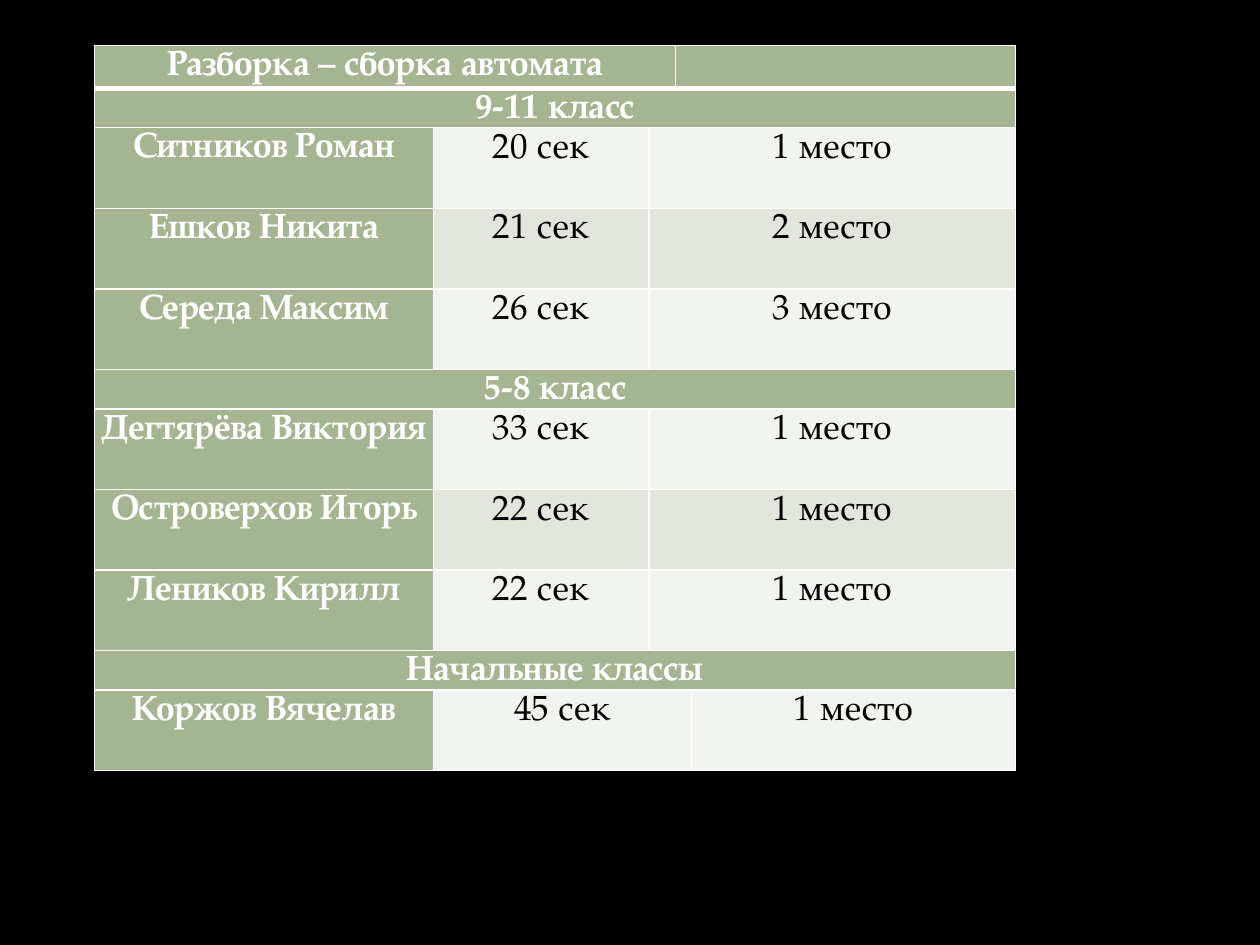
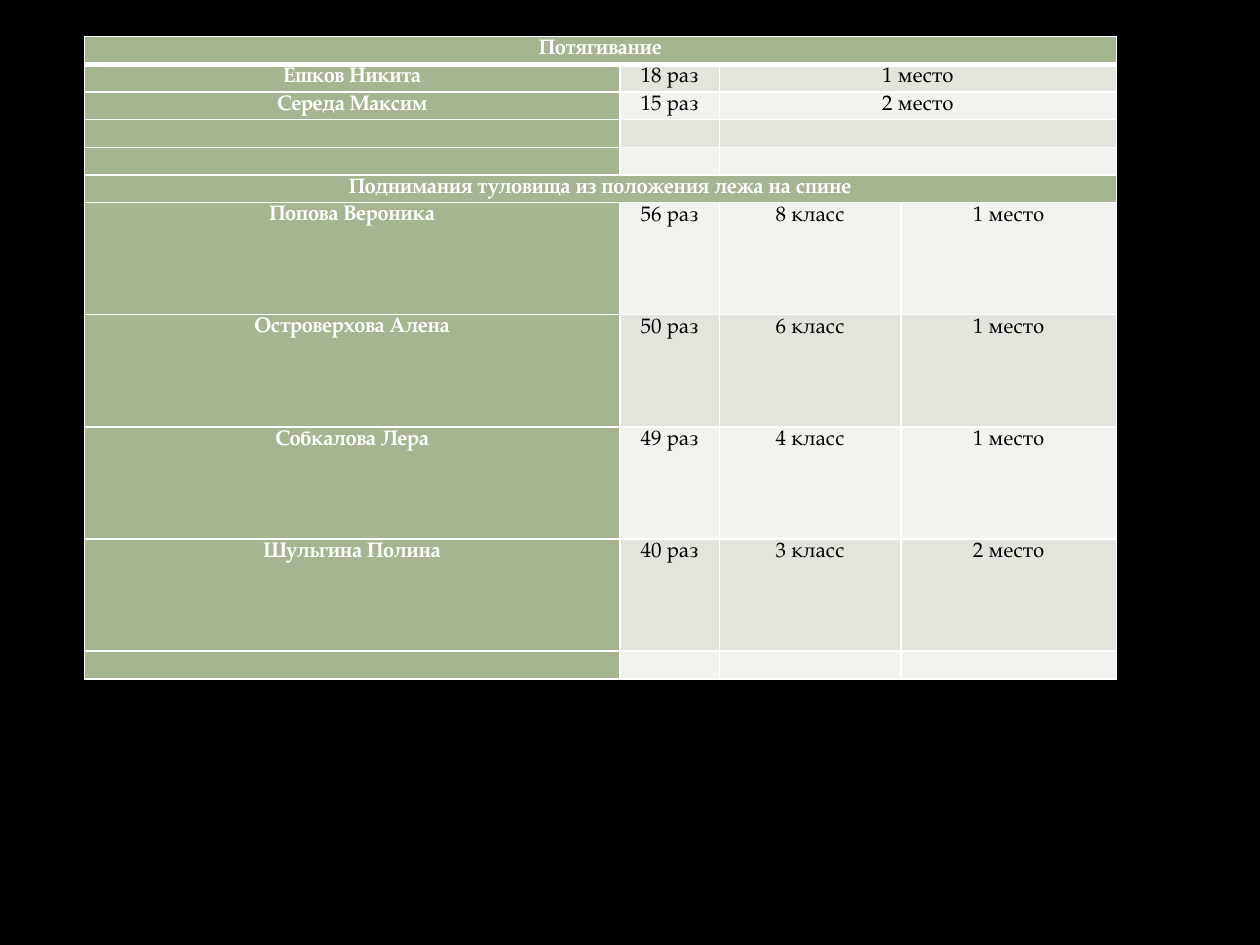
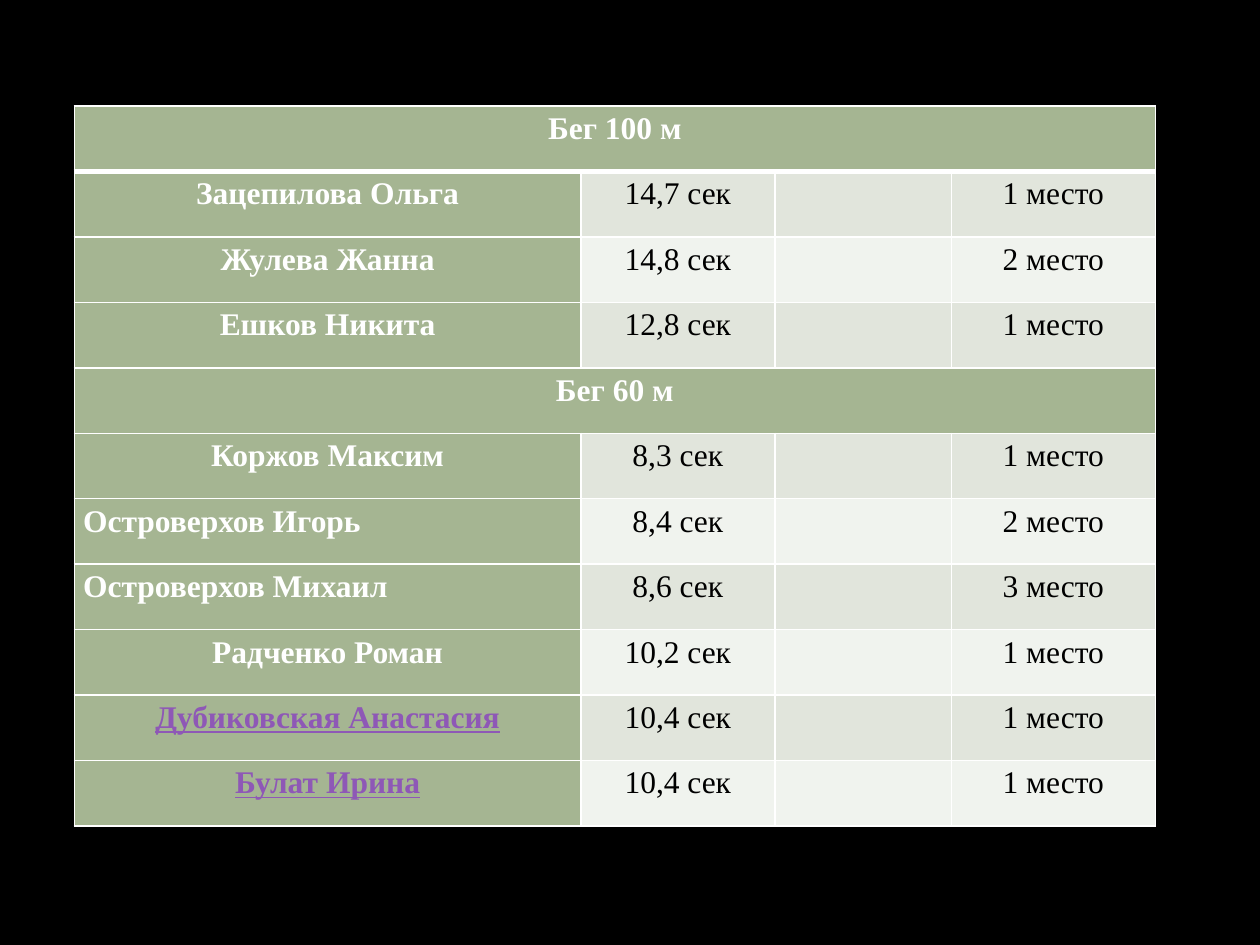
import dataclasses

import lxml.etree
import pptx
import pptx.dml.color
import pptx.enum.text
import pptx.oxml.ns
import pptx.util

Inches = pptx.util.Inches
Align = pptx.enum.text.PP_ALIGN


@dataclasses.dataclass(frozen=True)
class Theme:
    back: str = "000000"
    head: str = "A5B592"
    bands: tuple = ("F0F3EE", "E1E5DC")  # even rows, odd rows
    light: str = "FFFFFF"
    dark: str = "000000"
    mark: str = "8E58B6"
    serif: str = "TeX Gyre Pagella"
    roman: str = "Times New Roman"
    big: int = 20
    mid: int = 18
    small: int = 12
    thin: int = 1
    thick: int = 3
    space: float = 1.15


THEME = Theme()


def color(code):
    return pptx.dml.color.RGBColor.from_string(code)


def qname(tag):
    return pptx.oxml.ns.qn(tag)


def put_text(cell, text, size, font, tint=THEME.dark, bold=False,
             line=False, align=Align.CENTER, hang=0):
    """Write one paragraph; an empty one still keeps the type size."""
    para = cell.text_frame.paragraphs[0]
    para.alignment = align
    para.line_spacing = THEME.space
    if hang:
        props = para._p.get_or_add_pPr()
        props.set("marL", str(Inches(hang)))
        props.set("indent", str(-Inches(hang)))
    if not text:
        end = lxml.etree.SubElement(para._p, qname("a:endParaRPr"))
        end.set("sz", str(size * 100))
        return
    run = para.add_run()
    run.text = text
    run.font.size = pptx.util.Pt(size)
    run.font.name = font
    run.font.bold = bold
    run.font.underline = line
    run.font.color.rgb = color(tint)


def put_lines(cell, row):
    """Draw the white grid, with a thick rule below the first row."""
    props = cell._tc.get_or_add_tcPr()
    thick = {(0, "B"), (1, "T")}
    for side in "LRTB":
        width = THEME.thick if (row, side) in thick else THEME.thin
        edge = lxml.etree.SubElement(props, qname(f"a:ln{side}"))
        edge.set("w", str(pptx.util.Pt(width)))
        fill = lxml.etree.SubElement(edge, qname("a:solidFill"))
        lxml.etree.SubElement(fill, qname("a:srgbClr")).set("val", THEME.light)


def merge_row(table, row, items):
    """Join each None cell to the nearest filled cell on its left."""
    starts = [i for i, item in enumerate(items) if item is not None]
    for start, stop in zip(starts, starts[1:] + [len(items)]):
        if stop - start > 1:
            table.cell(row, start).merge(table.cell(row, stop - 1))


def add_grid(deck, left, top, cols, rows, data, size, font, inset, styles=None):
    """Add a slide with one table; styles maps a row to its name format."""
    slide = deck.slides.add_slide(deck.slide_layouts[6])
    frame = slide.shapes.add_table(
        len(rows), len(cols), Inches(left), Inches(top),
        Inches(sum(cols)), Inches(sum(rows)))
    table = frame.table
    table.first_row = table.horz_banding = False
    for col, width in zip(table.columns, cols):
        col.width = Inches(width)
    for line, height in zip(table.rows, rows):
        line.height = Inches(height)

    for row, items in enumerate(data):
        items = items + [None] * (len(cols) - len(items))
        merge_row(table, row, items)
        for col, item in enumerate(items):
            cell = table.cell(row, col)
            cell.margin_left = cell.margin_right = Inches(inset)
            cell.margin_top = cell.margin_bottom = 0
            put_lines(cell, row)
            main = row == 0 or col == 0 or len(data[row]) == 1
            cell.fill.solid()
            cell.fill.fore_color.rgb = color(
                THEME.head if main else THEME.bands[row % 2])
            look = {"tint": THEME.light, "bold": True} if main else {}
            if col == 0:
                look.update((styles or {}).get(row, {}))
            put_text(cell, item, size, font, **look)


def add_rifle(deck):
    data = [
        ["Разборка – сборка автомата", None, None, "", None],
        ["9-11 класс"],
        ["Ситников Роман", "20 сек", "1 место"],
        ["Ешков Никита", "21 сек", "2 место"],
        ["Середа Максим", "26 сек", "3 место"],
        ["5-8 класс"],
        ["Дегтярёва Виктория", "33 сек", "1 место"],
        ["Островерхов Игорь", "22 сек", "1 место"],
        ["Леников Кирилл", "22 сек", "1 место"],
        ["Начальные классы"],
        ["Коржов Вячелав", "45 сек", None, None, "1 место"],
    ]
    rows = [0.31 if i in (0, 1, 5, 9) else 0.64 for i in range(len(data))]
    add_grid(deck, 0.75, 0.36, [2.69, 1.71, 0.21, 0.13, 2.57], rows, data,
             THEME.big, THEME.serif, 0.04)


def add_gym(deck):
    data = [
        ["Потягивание"],
        ["Ешков Никита", "18 раз", "1 место"],
        ["Середа Максим", "15 раз", "2 место"],
        ["", "", ""],
        ["", "", ""],
        ["Поднимания туловища из положения лежа на спине"],
        ["Попова Вероника", "56 раз", "8 класс", "1 место"],
        ["Островерхова Алена", "50 раз", "6 класс", "1 место"],
        ["Собкалова Лера", "49 раз", "4 класс", "1 место"],
        ["Шульгина Полина", "40 раз", "3 класс", "2 место"],
        ["", "", "", ""],
    ]
    rows = [0.89 if 6 <= i <= 9 else 0.22 for i in range(len(data))]
    add_grid(deck, 0.67, 0.29, [4.25, 0.79, 1.44, 1.71], rows, data,
             THEME.small, THEME.serif, 0.05)


def add_run(deck):
    data = [
        ["Бег 100 м"],
        ["Зацепилова Ольга", "14,7 сек", "", "1 место"],
        ["Жулева Жанна", "14,8 сек", "", "2 место"],
        ["Ешков Никита", "12,8 сек", "", "1 место"],
        ["Бег 60 м"],
        ["Коржов Максим", "8,3 сек", "", "1 место"],
        ["Островерхов Игорь", "8,4 сек", "", "2 место"],
        ["Островерхов Михаил", "8,6 сек", "", "3 место"],
        ["Радченко Роман", "10,2 сек", "", "1 место"],
        ["Дубиковская Анастасия", "10,4 сек", "", "1 место"],
        ["Булат Ирина", "10,4 сек", "", "1 место"],
    ]
    styles = {i: {"hang": 0.49} for i in (3, 5, 6, 7, 8, 9, 10)}
    for i in (6, 7):
        styles[i]["align"] = Align.JUSTIFY
    for i in (9, 10):
        styles[i].update(tint=THEME.mark, line=True)
    add_grid(deck, 0.59, 0.84, [4.02, 1.54, 1.4, 1.62], [0.52] * len(data),
             data, THEME.mid, THEME.roman, 0.07, styles)


def main():
    deck = pptx.Presentation()
    deck.slide_width = Inches(10)
    deck.slide_height = Inches(7.5)

    # Shared background
    fill = deck.slide_master.background.fill
    fill.solid()
    fill.fore_color.rgb = color(THEME.back)

    # Result tables
    add_rifle(deck)
    add_gym(deck)
    add_run(deck)
    deck.save("out.pptx")


if __name__ == "__main__":
    main()
